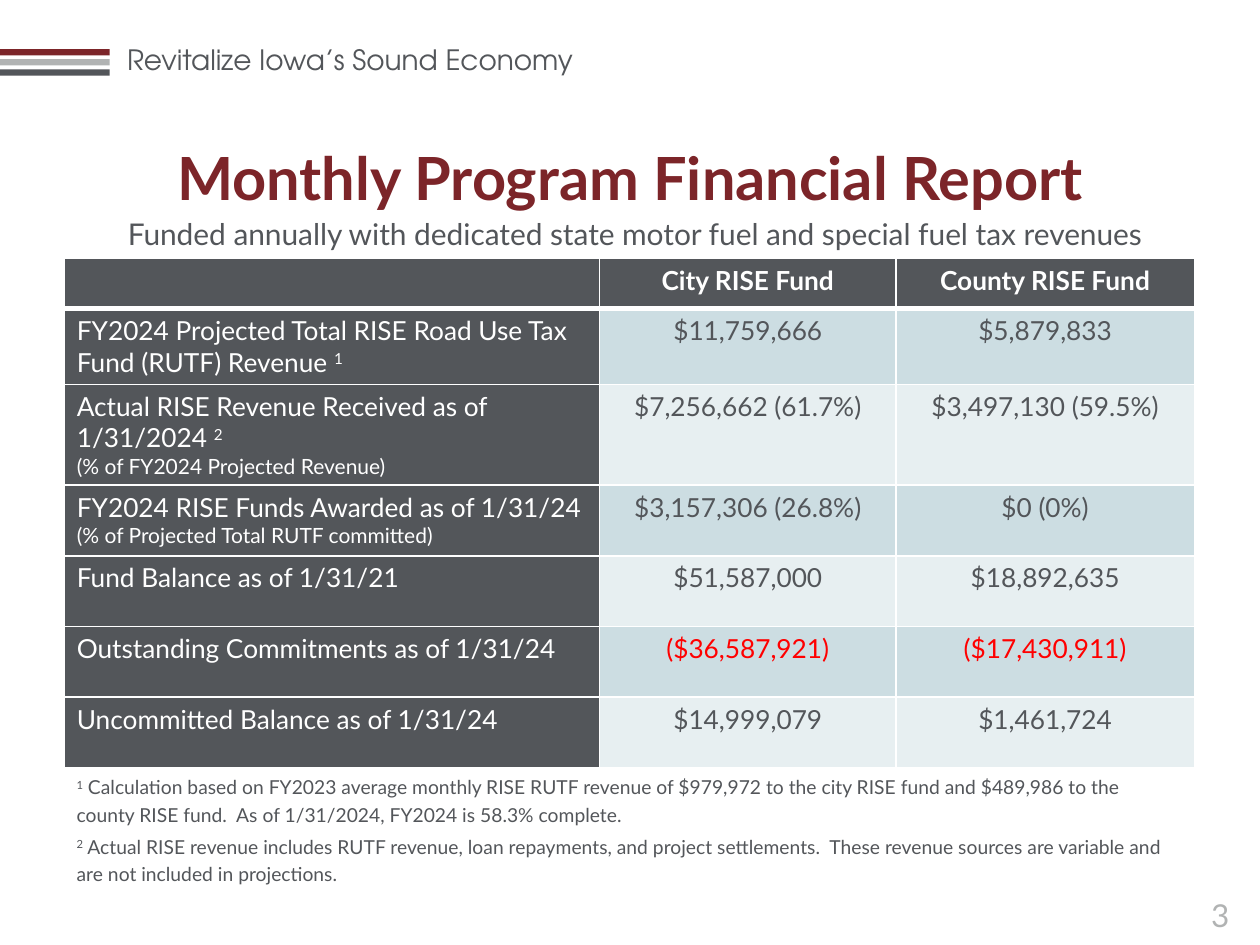
from lxml.etree import SubElement as Sub
from pptx import Presentation
from pptx.dml.color import RGBColor as Rgb
from pptx.enum.shapes import MSO_SHAPE as Shape
from pptx.enum.text import MSO_ANCHOR as Anchor, PP_ALIGN as Align
from pptx.oxml.ns import qn
from pptx.util import Inches, Pt

WIDE, HIGH = Inches(10), Inches(7.5)
GREY, RED, SILVER, WHITE = "53565A", "7C2529", "B1B3B3", "FFFFFF"
BANDS = "CCDDE2", "E7EFF1"
COLS = 42.5, 23.5, 23.7
HEAD = "", "City RISE Fund", "County RISE Fund"
ROWS = [
    ("FY2024 Projected Total RISE Road Use Tax Fund (RUTF) Revenue ", "1", "",
     "$11,759,666", "$5,879,833"),
    ("Actual RISE Revenue Received as of 1/31/2024 ", "2",
     "(% of FY2024 Projected Revenue)",
     "$7,256,662 (61.7%)", "$3,497,130 (59.5%)"),
    ("FY2024 RISE Funds Awarded as of 1/31/24", "",
     "(% of Projected Total RUTF committed)",
     "$3,157,306 (26.8%)", "$0 (0%)"),
    ("Fund Balance as of 1/31/21", "", "", "$51,587,000", "$18,892,635"),
    ("Outstanding Commitments as of 1/31/24", "", "",
     "($36,587,921)", "($17,430,911)"),
    ("Uncommitted Balance as of 1/31/24", "", "", "$14,999,079", "$1,461,724"),
]
NOTES = [
    " Calculation based on FY2023 average monthly RISE RUTF revenue of "
    "$979,972 to the city RISE fund and $489,986 to the county RISE fund.  "
    "As of 1/31/2024, FY2024 is 58.3% complete.",
    " Actual RISE revenue includes RUTF revenue, loan repayments, and project "
    "settlements.  These revenue sources are variable and are not included "
    "in projections.",
]


def tint(code):
    """Turn a hex string into a colour."""
    return Rgb.from_string(code)


def across(share):
    """Give a percentage of the slide's width."""
    return int(WIDE * share / 100)


def down(share):
    """Give a percentage of the slide's height."""
    return int(HIGH * share / 100)


def area(left, top, width, height):
    """Turn slide percentages into a position and size."""
    return across(left), down(top), across(width), down(height)


def write(para, text, size, hue, bold=False, face="Lato", raised=False):
    """Add one styled run to a paragraph."""
    run = para.add_run()
    run.text = text
    font = run.font
    font.name, font.size, font.bold = face, Pt(size), bold
    font.color.rgb = tint(hue)
    if raised:
        run._r.get_or_add_rPr().set("baseline", "30000")


def box(slide, place, align=Align.LEFT):
    """Add a wrapping text box and return its frame."""
    frame = slide.shapes.add_textbox(*area(*place)).text_frame
    frame.word_wrap = True
    frame.paragraphs[0].alignment = align
    return frame


def bar(slide, place, hue):
    """Add a plain filled rectangle."""
    shape = slide.shapes.add_shape(Shape.RECTANGLE, *area(*place))
    shape.shadow.inherit = False
    shape.fill.solid()
    shape.fill.fore_color.rgb = tint(hue)
    shape.line.fill.background()


def edge(cell, top, base):
    """Draw white borders with the given top and bottom widths."""
    props = cell._tc.get_or_add_tcPr()
    for spot, (side, width) in enumerate(
            (("L", 1), ("R", 1), ("T", top), ("B", base))):
        line = Sub(props, qn(f"a:ln{side}"), w=str(Pt(width)))
        Sub(Sub(line, qn("a:solidFill")), qn("a:srgbClr"), val=WHITE)
        props.insert(spot, line)


def paint(cell, fill, top=1, base=1):
    """Fill and border a cell, and return its first paragraph."""
    cell.fill.solid()
    cell.fill.fore_color.rgb = tint(fill)
    edge(cell, top, base)
    return cell.text_frame.paragraphs[0]


def label(cell, text, mark, note, top):
    """Write a row label with its footnote mark and small second line."""
    para = paint(cell, GREY, top)
    write(para, text, 15, WHITE)
    if mark:
        write(para, mark, 15, WHITE, raised=True)
    if note:
        write(cell.text_frame.add_paragraph(), note, 12, WHITE)


def funds(slide):
    """Add the table of fund figures."""
    table = slide.shapes.add_table(
        len(ROWS) + 1, len(COLS), *area(5.1, 27.33, sum(COLS), 50)).table
    for col, width in zip(table.columns, COLS):
        col.width = across(width)
    for num, row in enumerate(table.rows):
        row.height = down(7.47 if num else 5.2)
    for col, text in enumerate(HEAD):
        para = paint(table.cell(0, col), GREY, base=3)
        para.alignment = Align.CENTER
        write(para, text, 15, WHITE, bold=True)
    for num, (text, mark, note, *sums) in enumerate(ROWS, 1):
        top = 3 if num == 1 else 1
        label(table.cell(num, 0), text, mark, note, top)
        for col, value in enumerate(sums, 1):
            para = paint(table.cell(num, col), BANDS[(num - 1) % 2], top)
            para.alignment = Align.CENTER
            write(para, value, 15, "FF0000" if value[0] == "(" else GREY)


def notes(slide):
    """Add the numbered footnotes."""
    frame = box(slide, (5.1, 80.93, 89.8, 17.87))
    for num, text in enumerate(NOTES, 1):
        para = frame.paragraphs[0] if num == 1 else frame.add_paragraph()
        para.line_spacing = 1.2
        if num > 1:
            para.space_before = Pt(2.2)
        write(para, str(num), 11, GREY, raised=True)
        write(para, text, 11, GREY)


def main():
    """Build and save the slide."""
    deck = Presentation()
    deck.slide_width, deck.slide_height = WIDE, HIGH
    slide = deck.slides.add_slide(deck.slide_layouts[6])
    brand = box(slide, (9.1, 3.87, 40.9, 4.93))
    write(brand.paragraphs[0], "Revitalize Iowa’s Sound Economy", 16, GREY,
          face="TeX Gyre Adventor")
    for num, hue in enumerate((RED, SILVER, GREY)):
        bar(slide, (0, 5.2 + 1.07 * num, 8.7, 0.67), hue)
    page = box(slide, (92.5, 94.13, 8.7, 5.33), Align.CENTER)
    write(page.paragraphs[0], "3", 18, SILVER)
    notes(slide)
    title = box(slide, (1.2, 16.13, 97.6, 5.2), Align.CENTER)
    title.vertical_anchor = Anchor.MIDDLE
    write(title.paragraphs[0], "Monthly Program Financial Report", 34, RED,
          bold=True)
    funds(slide)
    lead = box(slide, (5.2, 22.13, 89.8, 5.2), Align.CENTER)
    lead.margin_left = Inches(0.16)
    write(lead.paragraphs[0], "Funded annually with dedicated state motor "
          "fuel and special fuel tax revenues", 17.1, GREY)
    deck.save("out.pptx")


if __name__ == "__main__":
    main()
